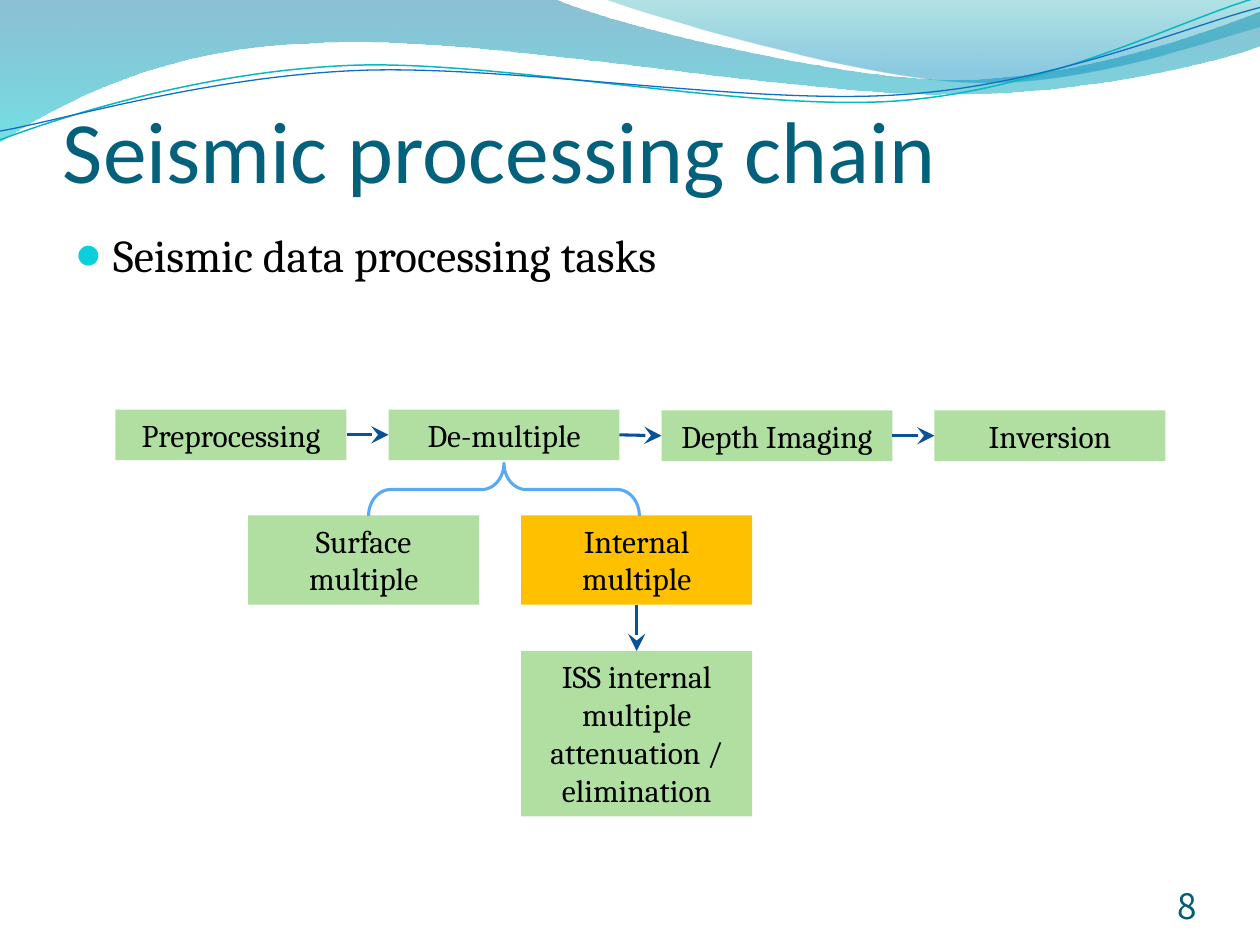
from math import cos, radians, sin
from lxml.etree import SubElement
from pptx import Presentation
from pptx.dml.color import RGBColor
from pptx.enum.shapes import MSO_CONNECTOR, MSO_SHAPE
from pptx.enum.text import MSO_ANCHOR, MSO_AUTO_SIZE, PP_ALIGN
from pptx.oxml.ns import qn
from pptx.util import Pt

COLORS = {
    "title": "04617B", "text": "000000", "number": "045D75", "bullet": "0BD0D9",
    "box": "B0DFA1", "focus": "FFC000", "brace": "59AAF2", "arrow": "095295",
    "teal_line": "0AB8BF", "blue_line": "0F6FC6",
    "band_top": "0074A1", "band_bottom": "00C6CF",
    "corner_top": "00A1A9", "corner_bottom": "008BBF",
}
BOX_W, PITCH = 132, 156
ROW_X, ROW_Y, ROW_H = 66, 234, 29
SUB_X, SUB_Y, SUB_H = 141.8, 294.5, 51
ISS_Y, ISS_H = 372, 94.5
WAVE_TILT = 2.7

BAND = [(0, 0), (316.8, -0.7), (342.7, 12.2, 478.1, 45.4, 545.8, 45.4),
        (614.2, 45.4, 689.8, 18.7, 720, 6.5), (720.7, 25.9),
        (707.8, 31.7, 626.4, 54.7, 537.1, 54), (447.8, 54, 275, 20.2, 185, 24.5),
        (92.9, 25.9, 33.1, 59.8, -0.7, 81.4)]
CORNER = [(344.9, -0.7), (366.5, 7.9, 491, 44.6, 553.7, 46.8),
          (616.3, 49.7, 691.9, 23, 720, 15.1), (720, 0)]
TEAL_WAVE = [(0, 79.9), (34.6, 67, 113.8, 41, 199.4, 37.4),
             (284.4, 33.8, 427, 64.1, 513.4, 57.6), (599.8, 51.1, 675.4, 10.8, 718.6, -1.4)]
BLUE_WAVE = [(0, 74.9), (33.8, 69.1, 118.1, 43.9, 203.8, 40.3),
             (290.2, 36.7, 429.8, 60.5, 516.2, 54), (601.9, 48.2, 677.5, 15.1, 720, 4.3)]


def rgb(name):
    return RGBColor.from_string(COLORS[name])


def turn(segments, angle, cx, cy):
    c, n = cos(radians(angle)), sin(radians(angle))
    turned = []
    for seg in segments:
        pairs = [(x - cx, y - cy) for x, y in zip(seg[::2], seg[1::2])]
        turned.append([v for x, y in pairs
                       for v in (cx + x * c - y * n, cy + x * n + y * c)])
    return turned


def add_outline(slide, segments, close):
    points = [(Pt(x), Pt(y)) for seg in segments for x, y in zip(seg[::2], seg[1::2])]
    builder = slide.shapes.build_freeform(*points[0])
    builder.add_line_segments(points[1:], close=close)
    s = builder.convert_to_shape()
    s.shadow.inherit = False
    lines = iter(list(s._element.iter(qn("a:lnTo"))))
    for seg in segments[1:]:
        first = next(lines)
        if len(seg) == 6:
            first.tag = qn("a:cubicBezTo")
            for _ in range(2):
                line = next(lines)
                first.append(line[0])
                line.getparent().remove(line)
    return s


def add_band(slide, segments, stops):
    s = add_outline(slide, segments, True)
    s.line.fill.background()
    s.fill.gradient()
    s.fill.gradient_angle = 270
    for stop, (position, color, _) in zip(s.fill.gradient_stops, stops):
        stop.position = position
        stop.color.rgb = rgb(color)
    for clr, (_, _, opacity) in zip(s._element.spPr.iter(qn("a:srgbClr")), stops):
        SubElement(clr, qn("a:alpha"), val=str(opacity * 1000))


def add_wave(slide, segments, cx, cy, color, width):
    s = add_outline(slide, turn(segments, WAVE_TILT, cx, cy), False)
    s.rotation = 360 - WAVE_TILT
    s.fill.background()
    s.line.color.rgb = rgb(color)
    s.line.width = Pt(width)


def add_run(p, text, size, font, color):
    r = p.add_run()
    r.text = text
    r.font.size = Pt(size)
    r.font.name = font
    r.font.color.rgb = rgb(color)


def add_text(slide, box, text, size, font, color, anchor=MSO_ANCHOR.TOP,
             align=PP_ALIGN.LEFT, insets=(7.2, 3.6, 7.2, 3.6)):
    tf = slide.shapes.add_textbox(*map(Pt, box)).text_frame
    tf.word_wrap = True
    tf.vertical_anchor = anchor
    tf.margin_left, tf.margin_top, tf.margin_right, tf.margin_bottom = map(Pt, insets)
    p = tf.paragraphs[0]
    p.alignment = align
    add_run(p, text, size, font, color)
    return p


def add_bullet(p, indent, color, size):
    p.space_before = Pt(5.2)
    pPr = p._p.get_or_add_pPr()
    pPr.set("marL", str(Pt(indent)))
    pPr.set("indent", str(-Pt(indent)))
    SubElement(SubElement(pPr, qn("a:buClr")), qn("a:srgbClr"), val=COLORS[color])
    SubElement(pPr, qn("a:buSzPct"), val=str(size * 1000))
    SubElement(pPr, qn("a:buFont"), typeface="Calibri")
    SubElement(pPr, qn("a:buChar"), char="●")


def add_box(slide, x, y, h, text, color="box"):
    s = slide.shapes.add_shape(MSO_SHAPE.RECTANGLE, Pt(x), Pt(y), Pt(BOX_W), Pt(h))
    s.shadow.inherit = False
    s.fill.solid()
    s.fill.fore_color.rgb = rgb(color)
    s.line.fill.background()
    tf = s.text_frame
    tf.word_wrap = True
    tf.auto_size = MSO_AUTO_SIZE.SHAPE_TO_FIT_TEXT
    tf.vertical_anchor = MSO_ANCHOR.TOP
    p = tf.paragraphs[0]
    p.alignment = PP_ALIGN.CENTER
    add_run(p, text, 18, "Cambria", "text")
    return s


def add_brace(slide, x, y, w, h):
    s = slide.shapes.add_shape(MSO_SHAPE.RIGHT_BRACE, Pt(x), Pt(y), Pt(w), Pt(h))
    s.shadow.inherit = False
    s.rotation = 270
    s.adjustments[0] = 0.42
    s.adjustments[1] = 0.5
    s.fill.background()
    s.line.color.rgb = rgb("brace")
    s.line.width = Pt(1.75)


def add_arrow(slide, start, start_site, end, end_site):
    s = slide.shapes.add_connector(MSO_CONNECTOR.STRAIGHT, 0, 0, 0, 0)
    s.begin_connect(start, start_site)
    s.end_connect(end, end_site)
    s.line.color.rgb = rgb("arrow")
    s.line.width = Pt(1.75)
    SubElement(s.line._get_or_add_ln(), qn("a:tailEnd"), type="stealth", w="lg", len="lg")
    SubElement(s._element.spPr, qn("a:effectLst"))


def main():
    prs = Presentation()
    prs.slide_width, prs.slide_height = Pt(720), Pt(540)
    slide = prs.slides.add_slide(prs.slide_layouts[6])

    add_band(slide, BAND, [(0, "band_top", 45), (1, "band_bottom", 55)])
    add_band(slide, CORNER, [(0, "corner_top", 30), (0.8, "corner_bottom", 45)])
    add_wave(slide, TEAL_WAVE, 359.3, 41.4, "teal_line", 0.85)
    add_wave(slide, BLUE_WAVE, 359.6, 42.5, "blue_line", 0.75)

    add_text(slide, (36, 25, 648, 90), "Seismic processing chain", 50, "Calibri",
             "title", MSO_ANCHOR.BOTTOM, insets=(0, 3.6, 0, 0))
    p = add_text(slide, (36, 126, 648, 366), "Seismic data processing tasks", 26,
                 "Cambria", "text")
    add_bullet(p, 21.6, "bullet", 95)
    add_text(slide, (624, 500.4, 60, 28.8), "8", 20, "Noto Sans CJK SC", "number",
             MSO_ANCHOR.BOTTOM, PP_ALIGN.RIGHT, (0, 0, 0, 0))

    steps = ["Preprocessing", "De-multiple", "Depth Imaging", "Inversion"]
    chain = [add_box(slide, ROW_X + i * PITCH, ROW_Y + 0.5 * (i > 1), ROW_H, text)
             for i, text in enumerate(steps)]
    add_box(slide, SUB_X, SUB_Y, SUB_H, "Surface multiple")
    internal = add_box(slide, SUB_X + PITCH, SUB_Y, SUB_H, "Internal multiple", "focus")
    iss = add_box(slide, SUB_X + PITCH, ISS_Y, ISS_H,
                  "ISS internal multiple attenuation / elimination")
    add_brace(slide, 272.9, 202.3, 30.2, 154.8)

    for start, end in zip(chain, chain[1:]):
        add_arrow(slide, start, 3, end, 1)
    add_arrow(slide, internal, 2, iss, 0)
    prs.save("out.pptx")


if __name__ == "__main__":
    main()
